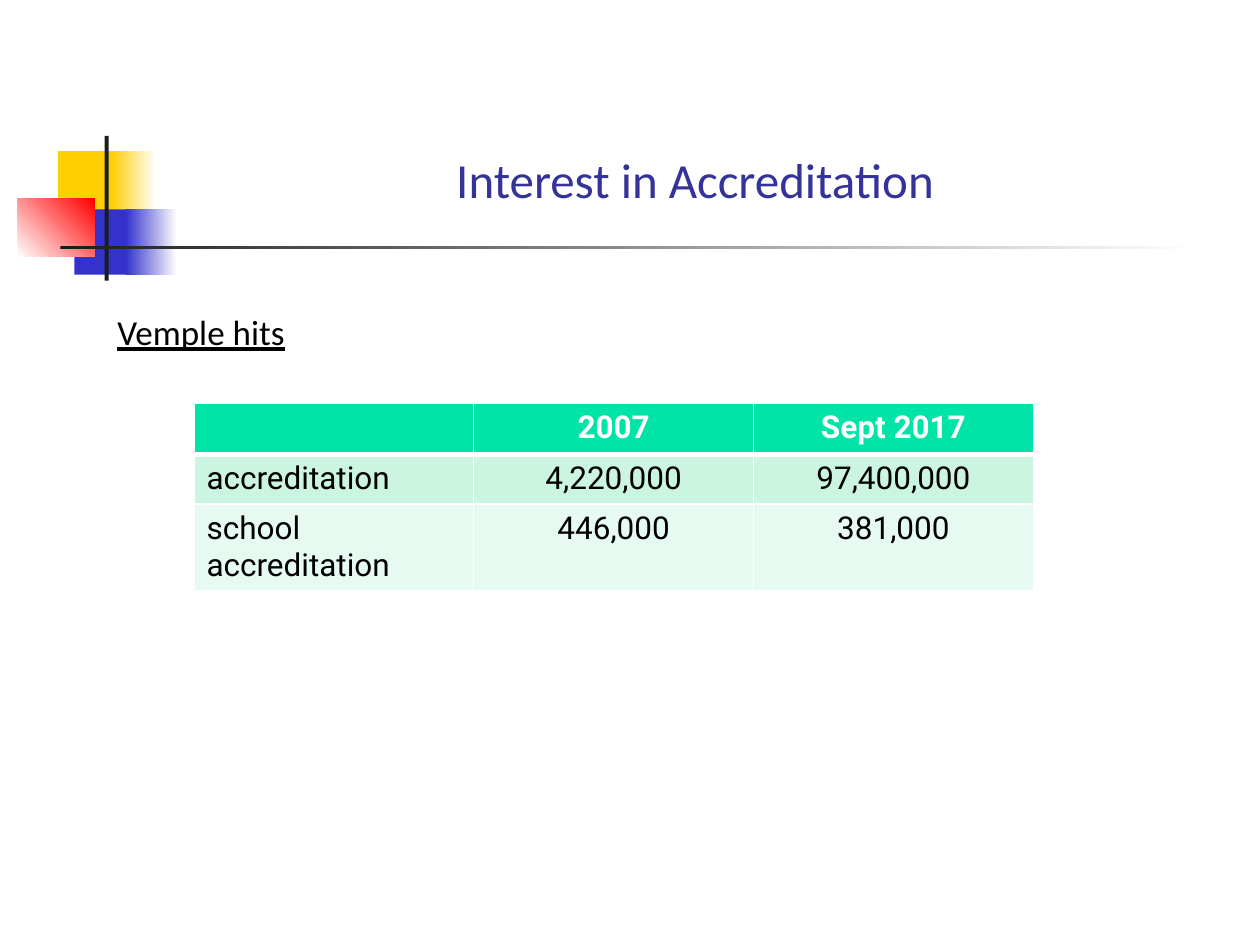
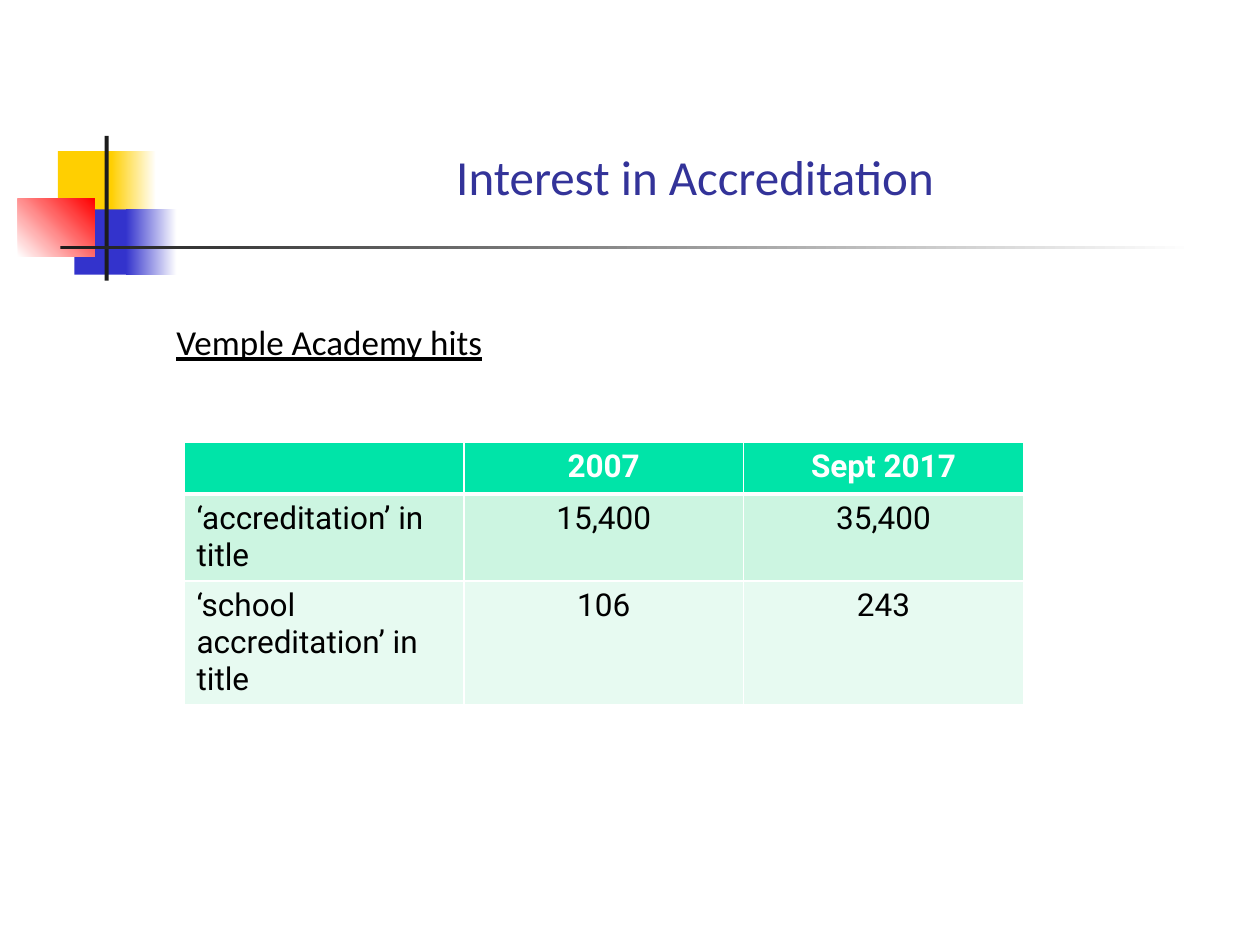
"""Build two slides that compare search hits for accreditation."""
from dataclasses import dataclass

from lxml import etree
from pptx import Presentation
from pptx.dml.color import RGBColor
from pptx.enum.shapes import MSO_SHAPE
from pptx.enum.text import MSO_ANCHOR, MSO_AUTO_SIZE, PP_ALIGN
from pptx.oxml.ns import qn
from pptx.util import Cm, Pt

RECTANGLE = MSO_SHAPE.RECTANGLE
BOTTOM = MSO_ANCHOR.BOTTOM
NO_AUTOFIT = MSO_AUTO_SIZE.NONE
LEFT, CENTER = PP_ALIGN.LEFT, PP_ALIGN.CENTER


@dataclass(frozen=True)
class Theme:
    text_font: str = "Calibri"
    table_font: str = "Roboto"
    title_size: int = 28
    body_size: int = 20
    table_size: int = 18
    title: str = "333399"
    black: str = "000000"
    white: str = "FFFFFF"
    yellow: str = "FFCF01"
    blue: str = "3333CC"
    red: str = "FF0000"
    charcoal: str = "1C1C1C"
    row_fills: tuple = ("00E4A8", "CCF5E1", "E7FAF1")


THEME = Theme()

BRAND_BLOCKS = [
    ((1.17, 3.05, 1.22, 1.32), [THEME.yellow], 0),
    ((2.24, 3.05, 0.91, 1.32), [THEME.yellow, THEME.white], 0),
    ((1.5, 4.22, 1.17, 1.32), [THEME.blue], 0),
    ((2.54, 4.22, 1.02, 1.32), [THEME.blue, THEME.white], 0),
    ((0.36, 4.01, 1.55, 1.17), [THEME.white, THEME.red], 45),
    ((2.11, 2.74, 0.08, 2.92), [THEME.charcoal], 0),
    ((1.22, 4.95, 22.86, 0.08), [THEME.charcoal, THEME.white], 0),
]

COLUMN_WIDTH = 5.64
HEADER = ["", "2007", "Sept 2017"]
PAGES = [
    {
        "title_at": (3.71, 1.32, 20.6, 3),
        "body_at": (2.11, 5.13, 22, 12.19),
        "table_at": (3.91, 8.13),
        "row_heights": [0.99, 0.99, 1.75],
        "heading": "Vemple hits",
        "rows": [
            ["accreditation", "4,220,000", "97,400,000"],
            ["school accreditation", "446,000", "381,000"],
        ],
    },
    {
        "title_at": (3.71, 1.12, 20.6, 3.15),
        "body_at": (3.3, 5.33, 21.21, 12.01),
        "table_at": (3.71, 8.92),
        "row_heights": [1.04, 1.75, 2.49],
        "heading": "Vemple Academy hits",
        "rows": [
            ["‘accreditation’ in title", "15,400", "35,400"],
            ["‘school accreditation’ in title", "106", "243"],
        ],
    },
]


def place_text(box, position, text, size, color):
    """Move a placeholder and write one formatted paragraph in it."""
    box.left, box.top, box.width, box.height = map(Cm, position)
    box.text_frame.text = text
    box.text_frame.auto_size = NO_AUTOFIT
    font = box.text_frame.paragraphs[0].runs[0].font
    font.name, font.size = THEME.text_font, Pt(size)
    font.color.rgb = RGBColor.from_string(color)
    return box.text_frame.paragraphs[0]


def add_border(cell, side, points):
    """Draw one white cell edge."""
    line = etree.SubElement(cell._tc.get_or_add_tcPr(), qn(f"a:ln{side}"), w=str(Pt(points)))
    fill = etree.SubElement(line, qn("a:solidFill"))
    etree.SubElement(fill, qn("a:srgbClr"), val=THEME.white)


deck = Presentation()
deck.slide_width, deck.slide_height = Cm(25.4), Cm(19.05)
layout = deck.slide_layouts[1]

for page_index, content in enumerate(PAGES):
    page = deck.slides.add_slide(layout)

    if page_index == 0:
        for number, (position, colors, angle) in enumerate(BRAND_BLOCKS):
            block = page.shapes.add_shape(RECTANGLE, *map(Cm, position))
            block.shadow.inherit = False
            block.line.fill.background()
            if len(colors) == 1:
                block.fill.solid()
                block.fill.fore_color.rgb = RGBColor.from_string(colors[0])
            else:
                block.fill.gradient()
                block.fill.gradient_angle = angle
                for stop, color in zip(block.fill.gradient_stops, colors):
                    stop.color.rgb = RGBColor.from_string(color)
            block.element.nvSpPr.cNvPr.set("id", str(20 + number))
            deck.slide_master.shapes.element.append(block.element)

    title = page.shapes.title
    para = place_text(title, content["title_at"], "Interest in Accreditation",
                      THEME.title_size, THEME.title)
    para.alignment = CENTER
    title.text_frame.vertical_anchor = BOTTOM

    body = page.placeholders[1]
    para = place_text(body, content["body_at"], content["heading"],
                      THEME.body_size, THEME.black)
    para.runs[0].font.underline = True
    para.space_before = Pt(0)
    body.text_frame.margin_top = Cm(1.13)
    properties = para._p.get_or_add_pPr()
    properties.set("marL", "0")
    properties.set("indent", "0")
    etree.SubElement(properties, qn("a:buNone"))

    rows = [HEADER] + content["rows"]
    heights = content["row_heights"]
    left, top = content["table_at"]
    table = page.shapes.add_table(
        len(rows), len(HEADER), Cm(left), Cm(top),
        Cm(COLUMN_WIDTH * len(HEADER)), Cm(sum(heights))).table
    for column in table.columns:
        column.width = Cm(COLUMN_WIDTH)
    for row_index, values in enumerate(rows):
        table.rows[row_index].height = Cm(heights[row_index])
        is_header = row_index == 0
        for column_index, value in enumerate(values):
            cell = table.cell(row_index, column_index)
            edges = {"L": 1, "R": 1, "T": 3 if row_index == 1 else 1, "B": 3 if is_header else 1}
            for side, points in edges.items():
                add_border(cell, side, points)
            cell.fill.solid()
            cell.fill.fore_color.rgb = RGBColor.from_string(THEME.row_fills[row_index])
            cell.text_frame.text = value
            para = cell.text_frame.paragraphs[0]
            para.alignment = CENTER if column_index else LEFT
            for span in para.runs:
                span.font.name, span.font.size = THEME.table_font, Pt(THEME.table_size)
                span.font.bold = is_header
                span.font.color.rgb = RGBColor.from_string(THEME.white if is_header else THEME.black)

deck.save("out.pptx")
